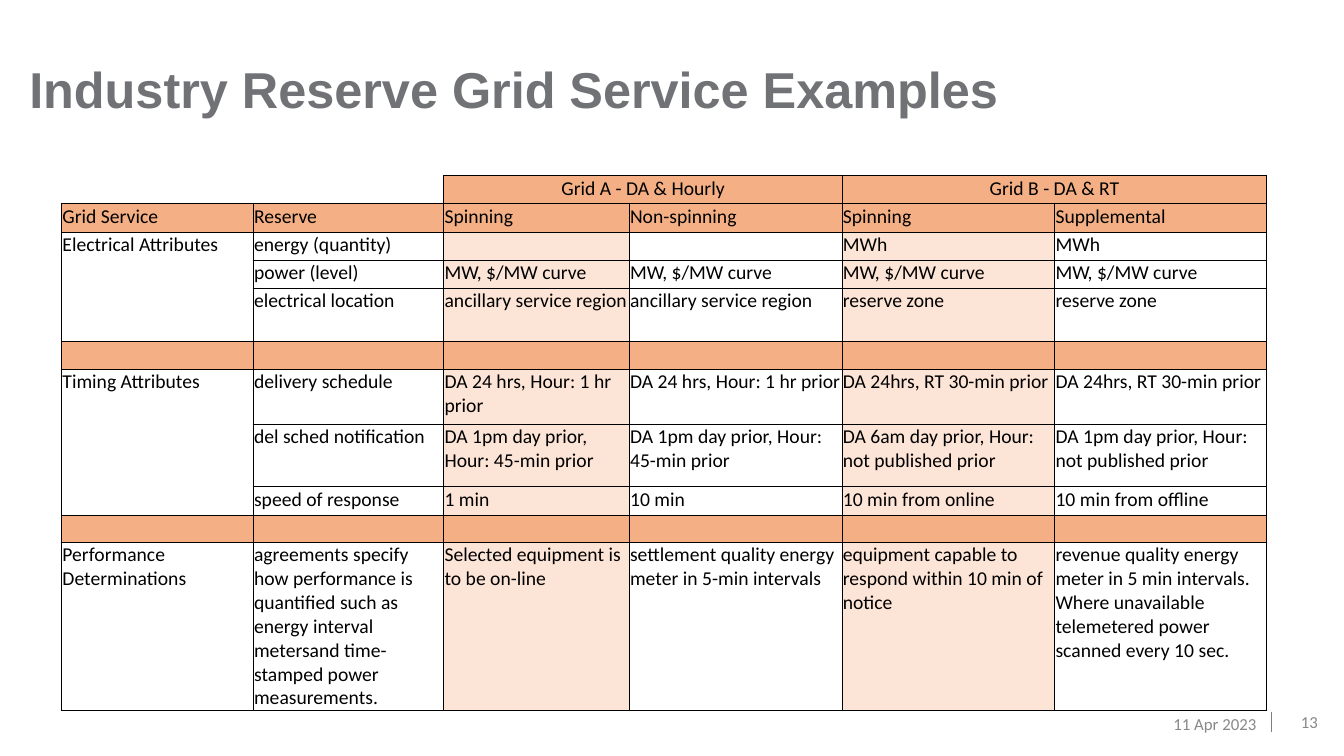
import lxml.etree
import pptx
import pptx.dml.color
import pptx.enum.shapes
import pptx.enum.text
import pptx.oxml.ns
import pptx.util

TITLE = "Industry Reserve Grid Service Examples"
FOOTER = [
    ("11 Apr 2023", (10.18, 6.98, 2.38, 0.4)),
    ("13", (12.61, 6.96, 0.56, 0.4)),
]
BLANK_ROW = ("",) * 6
ROWS = [
    (0.28, ("", "", "Grid A - DA & Hourly", "", "Grid B - DA & RT", "")),
    (0.28, ("Grid Service", "Reserve", "Spinning", "Non-spinning", "Spinning", "Supplemental")),
    (0.28, ("Electrical Attributes", "energy (quantity)", "", "", "MWh", "MWh")),
    (0.28, ("", "power (level)") + ("MW, $/MW curve",) * 4),
    (0.53, ("", "electrical location", "ancillary service region", "ancillary service region",
            "reserve zone", "reserve zone")),
    (0.27, BLANK_ROW),
    (0.55, ("Timing Attributes", "delivery schedule",
            "DA 24 hrs, Hour: 1 hr prior", "DA 24 hrs, Hour: 1 hr prior",
            "DA 24hrs, RT 30-min prior", "DA 24hrs, RT 30-min prior")),
    (0.62, ("", "del sched notification",
            "DA 1pm day prior, Hour: 45-min prior", "DA 1pm day prior, Hour: 45-min prior",
            "DA 6am day prior, Hour: not published prior",
            "DA 1pm day prior, Hour: not published prior")),
    (0.28, ("", "speed of response", "1 min", "10 min", "10 min from online", "10 min from offline")),
    (0.27, BLANK_ROW),
    (1.65, ("Performance Determinations",
            "agreements specify how performance is quantified such as energy interval "
            "metersand time-stamped power measurements.",
            "Selected equipment is to be on-line",
            "settlement quality energy meter in 5-min intervals",
            "equipment capable to respond within 10 min of notice",
            "revenue quality energy meter in 5 min intervals. Where unavailable "
            "telemetered power scanned every 10 sec.")),
]
COLUMN_WIDTHS = [1.9, 1.89, 1.84, 2.11, 2.11, 2.1]
MERGES = [((0, 2), (0, 3)), ((0, 4), (0, 5)), ((2, 0), (4, 0)), ((6, 0), (8, 0))]
BAND_ROWS = {0, 1, 5, 9}
TINTED_COLUMNS = {2, 4}
OPEN_SIDES = {(0, 0): "LRT", (0, 1): "LT"}
COLORS = {
    "title": "707276",
    "footer": "888888",
    "divider": "7F7F7F",
    "text": "000000",
    "border": "000000",
    "band": "F4B084",
    "tint": "FCE4D6",
}


def rgb(name):
    return pptx.dml.color.RGBColor.from_string(COLORS[name])


def box(bounds):
    return [pptx.util.Inches(length) for length in bounds]


def format_runs(paragraph, font_name, size, color, bold=False):
    for run in paragraph.runs:
        run.font.name = font_name
        run.font.size = pptx.util.Pt(size)
        run.font.bold = bold
        run.font.color.rgb = rgb(color)


def add_child(parent, tag, **attributes):
    return lxml.etree.SubElement(parent, pptx.oxml.ns.qn(tag), **attributes)


def set_borders(cell, open_sides):
    properties = cell._tc.get_or_add_tcPr()
    for side in "LRTB":
        border = add_child(properties, "a:ln" + side, w=str(pptx.util.Pt(0.5)))
        if side in open_sides:
            add_child(border, "a:noFill")
        else:
            fill = add_child(border, "a:solidFill")
            add_child(fill, "a:srgbClr", val=COLORS["border"])


def fill_cell(cell, row, column):
    if row in BAND_ROWS and (row, column) not in OPEN_SIDES:
        color = "band"
    elif row not in BAND_ROWS and column in TINTED_COLUMNS:
        color = "tint"
    else:
        cell.fill.background()
        return
    cell.fill.solid()
    cell.fill.fore_color.rgb = rgb(color)


def write_cell(cell, text, centered):
    cell.margin_left = cell.margin_top = pptx.util.Inches(0.01)
    cell.margin_right = cell.margin_bottom = 0
    paragraph = cell.text_frame.paragraphs[0]
    if text:
        paragraph.text = text
        format_runs(paragraph, "Calibri", 14, "text")
    else:
        add_child(paragraph._p, "a:endParaRPr", sz="1400")
    if centered:
        paragraph.alignment = pptx.enum.text.PP_ALIGN.CENTER


def add_title(slide):
    title = slide.shapes.title
    title.left, title.top, title.width, title.height = box((0.29, 0.3, 9.73, 0.88))
    frame = title.text_frame
    frame.text = TITLE
    frame.word_wrap = True
    frame.auto_size = pptx.enum.text.MSO_AUTO_SIZE.NONE
    frame.vertical_anchor = pptx.enum.text.MSO_ANCHOR.BOTTOM
    frame.margin_left = frame.margin_right = frame.margin_top = frame.margin_bottom = 0
    paragraph = frame.paragraphs[0]
    paragraph.alignment = pptx.enum.text.PP_ALIGN.LEFT
    format_runs(paragraph, "Arial", 36, "title", bold=True)


def add_reserve_table(slide):
    bounds = (0.61, 1.74, sum(COLUMN_WIDTHS), sum(height for height, texts in ROWS))
    table = slide.shapes.add_table(len(ROWS), len(COLUMN_WIDTHS), *box(bounds)).table
    table.first_row = False
    table.horz_banding = False
    for column, width in enumerate(COLUMN_WIDTHS):
        table.columns[column].width = pptx.util.Inches(width)
    for row, (height, texts) in enumerate(ROWS):
        table.rows[row].height = pptx.util.Inches(height)
        for column, text in enumerate(texts):
            cell = table.cell(row, column)
            write_cell(cell, text, centered=row == 0)
            set_borders(cell, OPEN_SIDES.get((row, column), ""))
            fill_cell(cell, row, column)
    for first, last in MERGES:
        table.cell(*first).merge(table.cell(*last))


def add_footer(slide):
    for text, bounds in FOOTER:
        frame = slide.shapes.add_textbox(*box(bounds)).text_frame
        frame.text = text
        frame.word_wrap = True
        frame.vertical_anchor = pptx.enum.text.MSO_ANCHOR.MIDDLE
        paragraph = frame.paragraphs[0]
        paragraph.alignment = pptx.enum.text.PP_ALIGN.RIGHT
        format_runs(paragraph, "Calibri", 12, "footer")
    divider = slide.shapes.add_connector(
        pptx.enum.shapes.MSO_CONNECTOR.STRAIGHT, *box((12.61, 7.06, 12.61, 7.26)))
    divider.line.color.rgb = rgb("divider")
    divider.line.width = pptx.util.Pt(1)
    add_child(divider._element.spPr, "a:effectLst")


def main():
    presentation = pptx.Presentation()
    presentation.slide_width = pptx.util.Inches(13.33)
    presentation.slide_height = pptx.util.Inches(7.5)
    slide = presentation.slides.add_slide(presentation.slide_layouts.get_by_name("Title Only"))
    add_title(slide)
    add_reserve_table(slide)
    add_footer(slide)
    presentation.save("out.pptx")


if __name__ == "__main__":
    main()
